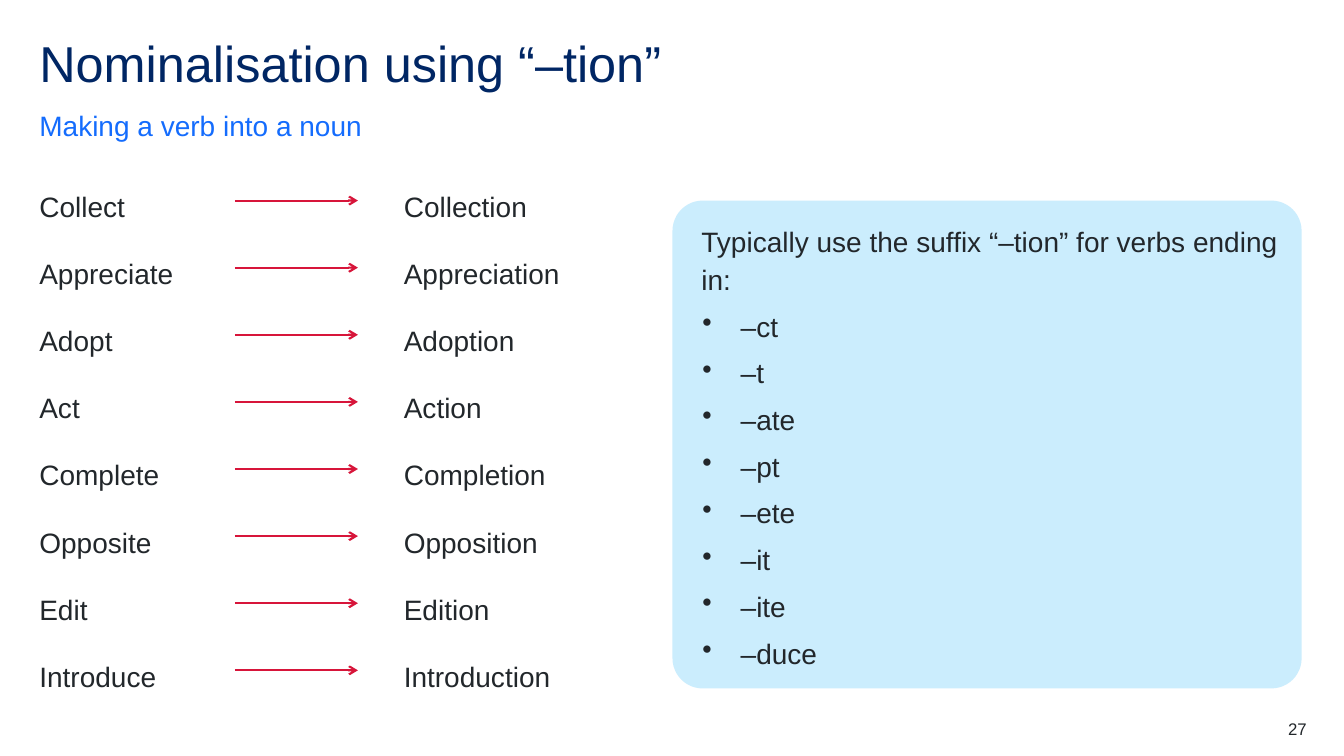
from lxml import etree
from pptx import Presentation
from pptx.dml.color import RGBColor
from pptx.enum.shapes import MSO_CONNECTOR, MSO_SHAPE
from pptx.enum.text import MSO_ANCHOR, PP_ALIGN
from pptx.oxml.ns import qn
from pptx.util import Inches, Pt

STRAIGHT = MSO_CONNECTOR.STRAIGHT
ROUNDED_RECTANGLE = MSO_SHAPE.ROUNDED_RECTANGLE
TOP, MIDDLE, BOTTOM = MSO_ANCHOR.TOP, MSO_ANCHOR.MIDDLE, MSO_ANCHOR.BOTTOM
LEFT, RIGHT = PP_ALIGN.LEFT, PP_ALIGN.RIGHT

NAVY, BLUE, RED = "002664", "146CFD", "D7153A"
PALE_BLUE, DARK_GREY = "CBEDFD", "22272B"

WORD_PAIRS = [
    ("Collect", "Collection"),
    ("Appreciate", "Appreciation"),
    ("Adopt", "Adoption"),
    ("Act", "Action"),
    ("Complete", "Completion"),
    ("Opposite", "Opposition"),
    ("Edit", "Edition"),
    ("Introduce", "Introduction"),
]
VERB_ENDINGS = ["–ct", "–t", "–ate", "–pt", "–ete", "–it", "–ite", "–duce"]


def rgb(color):
    return RGBColor.from_string(color)


def write(shape, lines, size, color, spacing=1.0, after=0, anchor=TOP, align=LEFT):
    """Fill a shape with one wrapped Arial paragraph per line."""
    frame = shape.text_frame
    frame.word_wrap = True
    frame.vertical_anchor = anchor
    frame.text = "\n".join(lines)
    for paragraph in frame.paragraphs:
        paragraph.alignment = align
        paragraph.line_spacing = spacing
        paragraph.space_after = Pt(after)
        paragraph.font.name = "Arial"
        paragraph.font.size = Pt(size)
        paragraph.font.color.rgb = rgb(color)


presentation = Presentation()
presentation.slide_width = Inches(13.33)
presentation.slide_height = Inches(7.5)
slide = presentation.slides.add_slide(presentation.slide_layouts[6])

# Title, subtitle, word list and page number
title = slide.shapes.add_textbox(Inches(0.39), Inches(0.39), Inches(12.56), Inches(0.6))
write(title, ["Nominalisation using “–tion”"], 36, NAVY, spacing=0.9)

subtitle = slide.shapes.add_textbox(Inches(0.39), Inches(1.07), Inches(12.56), Inches(0.34))
write(subtitle, ["Making a verb into a noun"], 20, BLUE, spacing=1.5, after=12, anchor=BOTTOM)

verbs, nouns = zip(*WORD_PAIRS)
word_list = slide.shapes.add_textbox(Inches(0.39), Inches(1.71), Inches(7.23), Inches(5.26))
write(word_list, verbs + nouns, 20, DARK_GREY, spacing=1.5, after=12)
word_list.text_frame._txBody.bodyPr.set("numCol", "2")

page_number = slide.shapes.add_textbox(Inches(12.17), Inches(7.13), Inches(0.79), Inches(0.2))
write(page_number, ["27"], 12, DARK_GREY, align=RIGHT)

for box in (title, subtitle, word_list, page_number):
    frame = box.text_frame
    frame.margin_left = frame.margin_top = frame.margin_right = frame.margin_bottom = 0

# Arrows from each verb to its noun
first_arrow, last_arrow = 1.99, 6.65
arrow_pitch = (last_arrow - first_arrow) / (len(WORD_PAIRS) - 1)
for row in range(len(WORD_PAIRS)):
    y = Inches(first_arrow + row * arrow_pitch)
    arrow = slide.shapes.add_connector(STRAIGHT, Inches(2.33), y, Inches(3.55), y)
    arrow.line.color.rgb = rgb(RED)
    arrow.line.width = Pt(1.5)
    etree.SubElement(arrow.line._get_or_add_ln(), qn("a:tailEnd"), type="arrow")
    etree.SubElement(arrow._element.spPr, qn("a:effectLst"))

# Rule panel
panel = slide.shapes.add_shape(
    ROUNDED_RECTANGLE, Inches(6.67), Inches(1.99), Inches(6.24), Inches(4.84))
panel.adjustments[0] = 0.062
panel.shadow.inherit = False
panel.fill.solid()
panel.fill.fore_color.rgb = rgb(PALE_BLUE)
panel.line.fill.background()
rule = "Typically use the suffix “–tion” for verbs ending in:"
write(panel, [rule] + VERB_ENDINGS, 20, DARK_GREY, spacing=1.14, after=6, anchor=MIDDLE)

introduction, *bullets = panel.text_frame.paragraphs
introduction._p.get_or_add_pPr().set("marL", str(Inches(0.1)))
for paragraph in bullets:
    properties = paragraph._p.get_or_add_pPr()
    properties.set("marL", str(Inches(0.49)))
    properties.set("indent", str(Inches(-0.38)))
    bullet = etree.Element(qn("a:buChar"), char="•")
    properties.find(qn("a:defRPr")).addprevious(bullet)

presentation.save("out.pptx")
